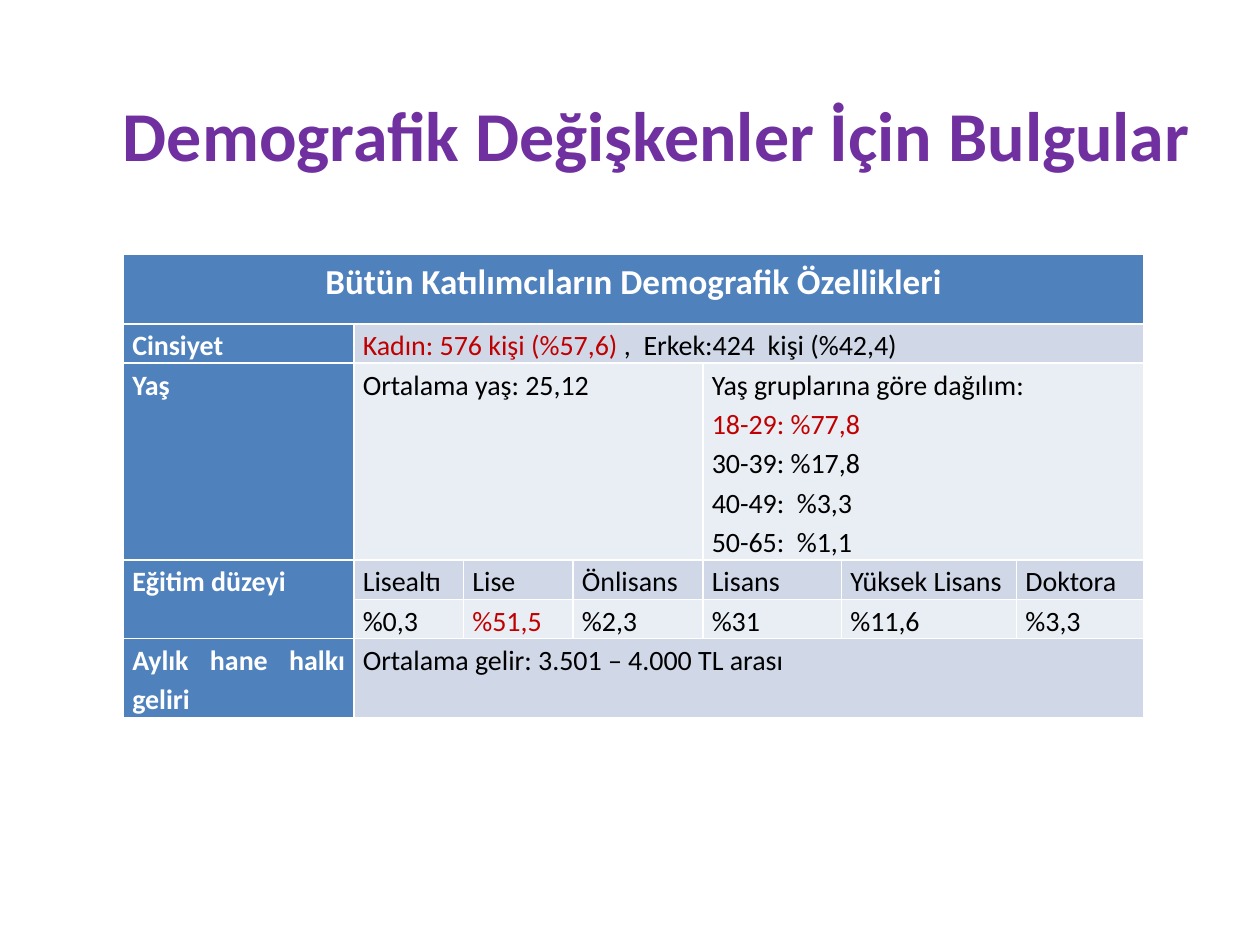
from pptx import Presentation
from pptx import util as u
from pptx.dml.color import RGBColor
from pptx.enum import text as t

BLUE, DARK, PALE = "4F81BD", "D0D8E8", "E9EDF4"
WHITE, BLACK, RED, PURPLE = "FFFFFF", "000000", "C00000", "7030A0"
WIDTHS = [1.83, 0.87, 0.87, 1.03, 1.1, 1.39, 1.01]
HEIGHTS = [0.55, 0.31, 1.56, 0.31, 0.31, 0.62]
LEVELS = [("Lisealtı", "%0,3"), ("Lise", "%51,5"), ("Önlisans", "%2,3"),
          ("Lisans", "%31"), ("Yüksek Lisans", "%11,6"), ("Doktora", "%3,3")]
AGES = ["Yaş gruplarına göre dağılım:", "18-29: %77,8", "30-39: %17,8",
        "40-49:  %3,3", "50-65:  %1,1"]
HOT = {"Kadın: 576 kişi (%57,6) ", "18-29: %77,8", "%51,5"}


def tint(code):
    return RGBColor.from_string(code)


def style(font, size, color, bold):
    font.name = "Calibri"
    font.size = u.Pt(size)
    font.bold = bold
    font.color.rgb = tint(color)


def add_title(slide, words, x, y, w, h):
    title = slide.shapes.title
    title.left, title.top = u.Inches(x), u.Inches(y)
    title.width, title.height = u.Inches(w), u.Inches(h)
    frame = title.text_frame
    frame.text = words
    frame.word_wrap = True
    frame.vertical_anchor = t.MSO_ANCHOR.TOP
    para = frame.paragraphs[0]
    para.alignment = t.PP_ALIGN.CENTER
    style(para.font, 40, PURPLE, True)


def fill_cell(cell, lines, back, size=16, align=t.PP_ALIGN.JUSTIFY):
    cell.fill.solid()
    cell.fill.fore_color.rgb = tint(back)
    cell.margin_left = cell.margin_right = u.Inches(0.07)
    cell.margin_top = cell.margin_bottom = 0
    head = back == BLUE
    frame = cell.text_frame
    for i, line in enumerate(lines):
        para = frame.add_paragraph() if i else frame.paragraphs[0]
        para.alignment = align
        para.line_spacing = 1.15
        parts = [line] if isinstance(line, str) else line
        style(para.font, size, WHITE if head else BLACK, head)
        for part in parts:
            run = para.add_run()
            run.text = part
            if part in HOT:
                run.font.color.rgb = tint(RED)


def add_grid(slide, x, y):
    shape = slide.shapes.add_table(
        len(HEIGHTS), len(WIDTHS), u.Inches(x), u.Inches(y),
        u.Inches(sum(WIDTHS)), u.Inches(sum(HEIGHTS)))
    table = shape.table
    for col, w in zip(table.columns, WIDTHS):
        col.width = u.Inches(w)
    for row, h in zip(table.rows, HEIGHTS):
        row.height = u.Inches(h)

    def span(top, left, low, right):
        cell = table.cell(top, left)
        cell.merge(table.cell(low, right))
        return cell

    fill_cell(span(0, 0, 0, 6), ["Bütün Katılımcıların Demografik Özellikleri"],
              BLUE, 20, t.PP_ALIGN.CENTER)
    span(3, 0, 4, 0)
    labels = {1: "Cinsiyet", 2: "Yaş", 3: "Eğitim düzeyi",
              5: "Aylık hane halkı geliri"}
    for row, label in labels.items():
        fill_cell(table.cell(row, 0), [label], BLUE)

    sexes = ["Kadın: 576 kişi (%57,6) ", ",  Erkek:424  kişi (%42,4)"]
    fill_cell(span(1, 1, 1, 6), [sexes], DARK)
    fill_cell(span(2, 1, 2, 3), ["Ortalama yaş: 25,12"], PALE)
    fill_cell(span(2, 4, 2, 6), AGES, PALE)
    for col, (level, share) in enumerate(LEVELS, 1):
        fill_cell(table.cell(3, col), [level], DARK)
        fill_cell(table.cell(4, col), [share], PALE)
    fill_cell(span(5, 1, 5, 6), ["Ortalama gelir: 3.501 – 4.000 TL arası"], DARK)


def main():
    deck = Presentation()
    deck.slide_width, deck.slide_height = u.Inches(10), u.Inches(7.5)
    slide = deck.slides.add_slide(deck.slide_layouts[5])
    add_title(slide, "Demografik Değişkenler İçin Bulgular", 0.71, 0.68, 9, 0.74)
    add_grid(slide, 0.98, 2.02)
    deck.save("out.pptx")


if __name__ == "__main__":
    main()
